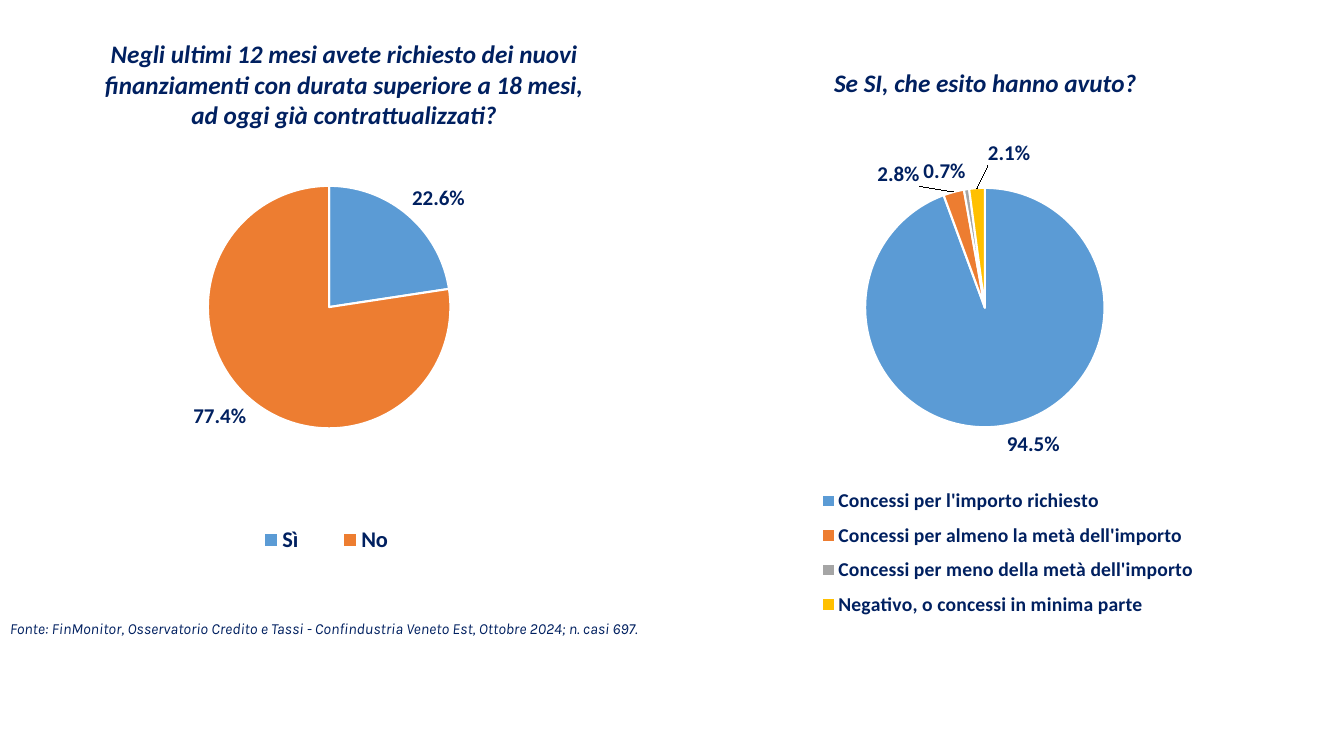
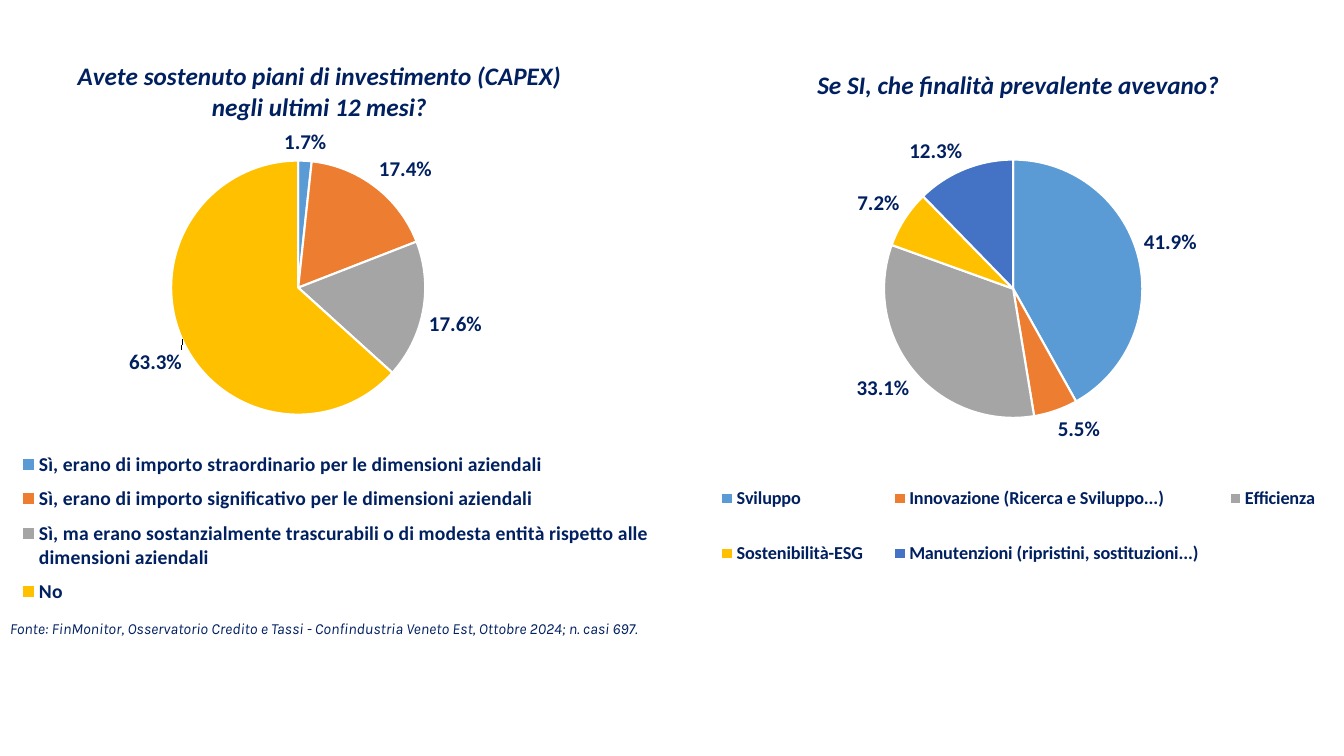
import lxml.etree
import pptx
import pptx.chart.data
import pptx.dml.color
import pptx.enum.chart
import pptx.enum.text
import pptx.oxml.ns
import pptx.util

PX = 9525  # EMU in one px
SLIDE = (1280, 720)
CHART = (640, 610)

THEME = {
    "ink": "002060",
    "edge": "FFFFFF",
    "slices": ["5B9BD5", "ED7D31", "A5A5A5", "FFC000", "4472C4"],
    "edge_width": 1.5,
    "percent": "0.0%",
    "base": {"name": "Calibri", "size": 10},
    "title": {"name": "Calibri", "size": 18, "bold": True, "italic": True},
    "label": {"name": "Calibri", "size": 15, "bold": True},
    "legend": {"name": "Calibri", "bold": True},
    "source": {"name": "Karla", "size": 11, "italic": True},
}

SOURCE = ("Fonte: FinMonitor, Osservatorio Credito e Tassi - Confindustria Veneto Est, "
          "Ottobre 2024; n. casi 697.")
SOURCE_BOX = (0, 585, 669, 28)

# Boxes are px inside the chart: pie is left, top, diameter;
# moved holds the shift of single labels by slice index.
SLIDES = [
    [
        {
            "question": ["Negli ultimi 12 mesi avete richiesto dei nuovi",
                         "finanziamenti con durata superiore a 18 mesi,",
                         "ad oggi già contrattualizzati?"],
            "answers": [("Sì", 0.226), ("No", 0.774)],
            "title_at": (97, 33),
            "pie": (198, 177, 231),
            "legend_box": (216, 486, 189, 57),
            "legend_size": 16,
            "moved": {},
        },
        {
            "question": ["Se SI, che esito hanno avuto?"],
            "answers": [("Concessi per l'importo richiesto", 0.945),
                        ("Concessi per almeno la metà dell'importo", 0.028),
                        ("Concessi per meno della metà dell'importo", 0.007),
                        ("Negativo, o concessi in minima parte", 0.021)],
            "title_at": (150, 58),
            "pie": (184, 179, 228),
            "legend_box": (125, 456, 390, 141),
            "legend_size": 14,
            "moved": {1: (-31, 0), 3: (31, -16)},
        },
    ],
    [
        {
            "question": ["Avete sostenuto piani di investimento (CAPEX)",
                         "negli ultimi 12 mesi?"],
            "answers": [
                ("Sì, erano di importo straordinario per le dimensioni aziendali", 0.017),
                ("Sì, erano di importo significativo per le dimensioni aziendali", 0.174),
                ("Sì, ma erano sostanzialmente trascurabili o di modesta entità "
                 "rispetto alle dimensioni aziendali", 0.176),
                ("No", 0.633)],
            "title_at": (71, 54),
            "pie": (163, 153, 242),
            "legend_box": (12, 421, 616, 164),
            "legend_size": 14,
            "moved": {3: (5, 8)},
        },
        {
            "question": ["Se SI, che finalità prevalente avevano?"],
            "answers": [("Sviluppo", 0.419),
                        ("Innovazione (Ricerca e Sviluppo...)", 0.055),
                        ("Efficienza", 0.331),
                        ("Sostenibilità-ESG", 0.072),
                        ("Manutenzioni (ripristini, sostituzioni...)", 0.123)],
            "title_at": (134, 60),
            "pie": (202, 152, 246),
            "legend_box": (23, 433, 614, 136),
            "legend_size": 13,
            "moved": {},
        },
    ],
]


def emu(box):
    return [pptx.util.Emu(px * PX) for px in box]


def rgb(code):
    return pptx.dml.color.RGBColor.from_string(code)


def style(font, look):
    for name, value in look.items():
        setattr(font, name, pptx.util.Pt(value) if name == "size" else value)
    font.color.rgb = rgb(THEME["ink"])


def chart_element(tag, **attributes):
    return lxml.etree.Element(pptx.oxml.ns.qn(f"c:{tag}"), attributes)


def place(part, index, box, modes=()):
    """Give a chart part a manual layout as fractions of the chart."""
    for old in part.xpath("c:layout"):
        part.remove(old)
    layout = chart_element("layout")
    manual = chart_element("manualLayout")
    layout.append(manual)
    for tag, value in modes:
        manual.append(chart_element(tag, val=value))
    for tag, px, whole in zip("xywh", box, CHART * 2):
        manual.append(chart_element(tag, val=f"{px / whole:.4f}"))
    part.insert(index, layout)


def move_label(chart, series, index, shift):
    label = series.points[index].data_label
    style(label.font, THEME["label"])
    label.position = pptx.enum.chart.XL_LABEL_POSITION.OUTSIDE_END
    node = chart.element.xpath(f'.//c:dLbl[c:idx/@val="{index}"]')[0]
    place(node, 1, shift)
    node.insert(2, chart_element("numFmt", formatCode=THEME["percent"], sourceLinked="0"))


def add_pie(slide, column, survey):
    names, shares = zip(*survey["answers"])
    answers = pptx.chart.data.CategoryChartData(number_format=THEME["percent"])
    answers.categories = names
    answers.add_series("Series 1", shares)
    chart = slide.shapes.add_chart(
        pptx.enum.chart.XL_CHART_TYPE.PIE,
        *emu((column * CHART[0], 0) + CHART), answers).chart
    style(chart.font, THEME["base"])

    # Question as chart title
    heading = chart.chart_title.text_frame
    for number, line in enumerate(survey["question"]):
        paragraph = heading.add_paragraph() if number else heading.paragraphs[0]
        paragraph.alignment = pptx.enum.text.PP_ALIGN.CENTER
        run = paragraph.add_run()
        run.text = line
        style(run.font, THEME["title"])

    # Slices
    plot = chart.plots[0]
    plot.vary_by_categories = True
    series = plot.series[0]
    for index, colour in enumerate(THEME["slices"][:len(names)]):
        slice_format = series.points[index].format
        slice_format.fill.solid()
        slice_format.fill.fore_color.rgb = rgb(colour)
        slice_format.line.color.rgb = rgb(THEME["edge"])
        slice_format.line.width = pptx.util.Pt(THEME["edge_width"])

    # Percentages
    labels = series.data_labels
    label_format = {
        "show_value": True,
        "number_format": THEME["percent"],
        "number_format_is_linked": False,
        "position": pptx.enum.chart.XL_LABEL_POSITION.OUTSIDE_END,
    }
    for name, value in label_format.items():
        setattr(labels, name, value)
    style(labels.font, THEME["label"])
    for index, shift in survey["moved"].items():
        move_label(chart, series, index, shift)

    # Legend
    chart.has_legend = True
    chart.legend.position = pptx.enum.chart.XL_LEGEND_POSITION.BOTTOM
    chart.legend.include_in_layout = False
    style(chart.legend.font, THEME["legend"] | {"size": survey["legend_size"]})

    # Positions inside the chart
    edges = [("xMode", "edge"), ("yMode", "edge")]
    left, top, diameter = survey["pie"]
    for tag, index, box, modes in [
        ("title", 1, survey["title_at"], edges),
        ("plotArea", 0, (left, top, diameter, diameter),
         [("layoutTarget", "inner")] + edges),
        ("legend", 1, survey["legend_box"], edges),
    ]:
        place(chart.element.xpath(f".//c:{tag}")[0], index, box, modes)


def add_source(slide):
    frame = slide.shapes.add_textbox(*emu(SOURCE_BOX)).text_frame
    frame.word_wrap = True
    run = frame.paragraphs[0].add_run()
    run.text = SOURCE
    style(run.font, THEME["source"])


def main():
    deck = pptx.Presentation()
    deck.slide_width, deck.slide_height = emu(SLIDE)
    blank = deck.slide_layouts[6]
    for surveys in SLIDES:
        slide = deck.slides.add_slide(blank)
        for column, survey in enumerate(surveys):
            add_pie(slide, column, survey)
        add_source(slide)
    deck.save("out.pptx")


if __name__ == "__main__":
    main()
